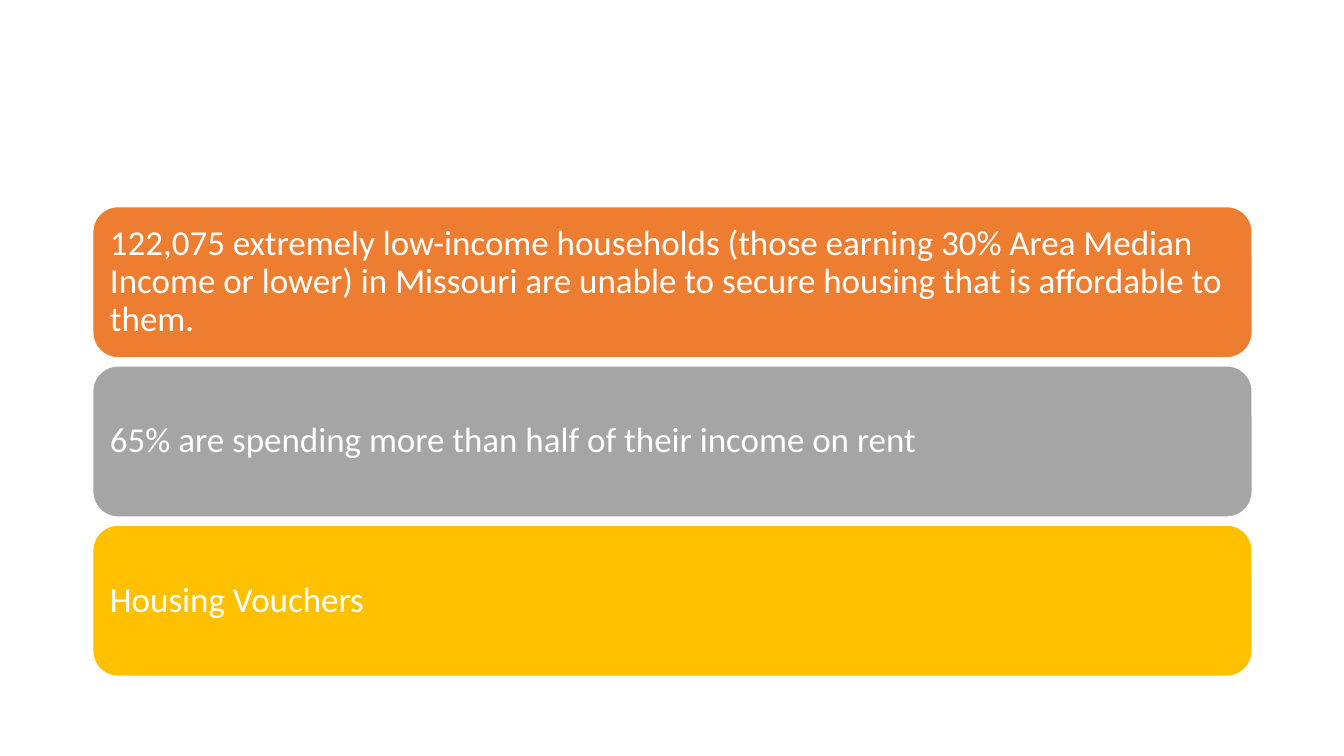
import pptx
import pptx.util
from pptx.dml.color import RGBColor
from pptx.enum.shapes import MSO_SHAPE
from pptx.enum.text import MSO_ANCHOR, PP_ALIGN
from pptx.util import Inches

COLOURS = {
    "orange": "ED7D31",
    "grey": "A5A5A5",
    "gold": "FFC000",
    "white": "FFFFFF",
}
FACTS = [
    ("orange", "122,075 extremely low-income households (those earning 30% Area Median "
               "Income or lower) in Missouri are unable to secure housing that is "
               "affordable to them."),
    ("grey", "65% are spending more than half of their income on rent"),
    ("gold", "Housing Vouchers"),
]
CARD_LEFT, CARD_TOP, CARD_WIDTH, CARD_HEIGHT = 0.92, 2.05, 11.5, 1.5
CARD_STEP = 1.58


def colour(name):
    return RGBColor.from_string(COLOURS[name])


def set_values(target, values):
    for name, value in values.items():
        setattr(target, name, value)


def add_card(page, top, fill, text):
    card = page.shapes.add_shape(
        MSO_SHAPE.ROUNDED_RECTANGLE,
        Inches(CARD_LEFT), Inches(top), Inches(CARD_WIDTH), Inches(CARD_HEIGHT))
    card.shadow.inherit = False
    card.fill.solid()
    card.fill.fore_color.rgb = colour(fill)
    card.line.color.rgb = colour("white")
    card.line.width = pptx.util.Pt(1)

    # Text inside the card
    frame = card.text_frame
    inset = Inches(0.1)
    set_values(frame, {
        "word_wrap": True, "vertical_anchor": MSO_ANCHOR.MIDDLE,
        "margin_left": inset, "margin_right": inset,
        "margin_top": inset, "margin_bottom": inset})
    para = frame.paragraphs[0]
    set_values(para, {"alignment": PP_ALIGN.LEFT, "line_spacing": 0.9})
    span = para.add_run()
    span.text = text
    set_values(span.font, {"name": "Calibri", "size": pptx.util.Pt(25)})
    span.font.color.rgb = colour("white")


def main():
    deck = pptx.Presentation()
    deck.slide_width, deck.slide_height = Inches(13.33), Inches(7.5)
    page = deck.slides.add_slide(deck.slide_layouts[6])

    # Stack of housing facts
    for index, (fill, text) in enumerate(FACTS):
        add_card(page, CARD_TOP + index * CARD_STEP, fill, text)

    deck.save("out.pptx")


if __name__ == "__main__":
    main()
